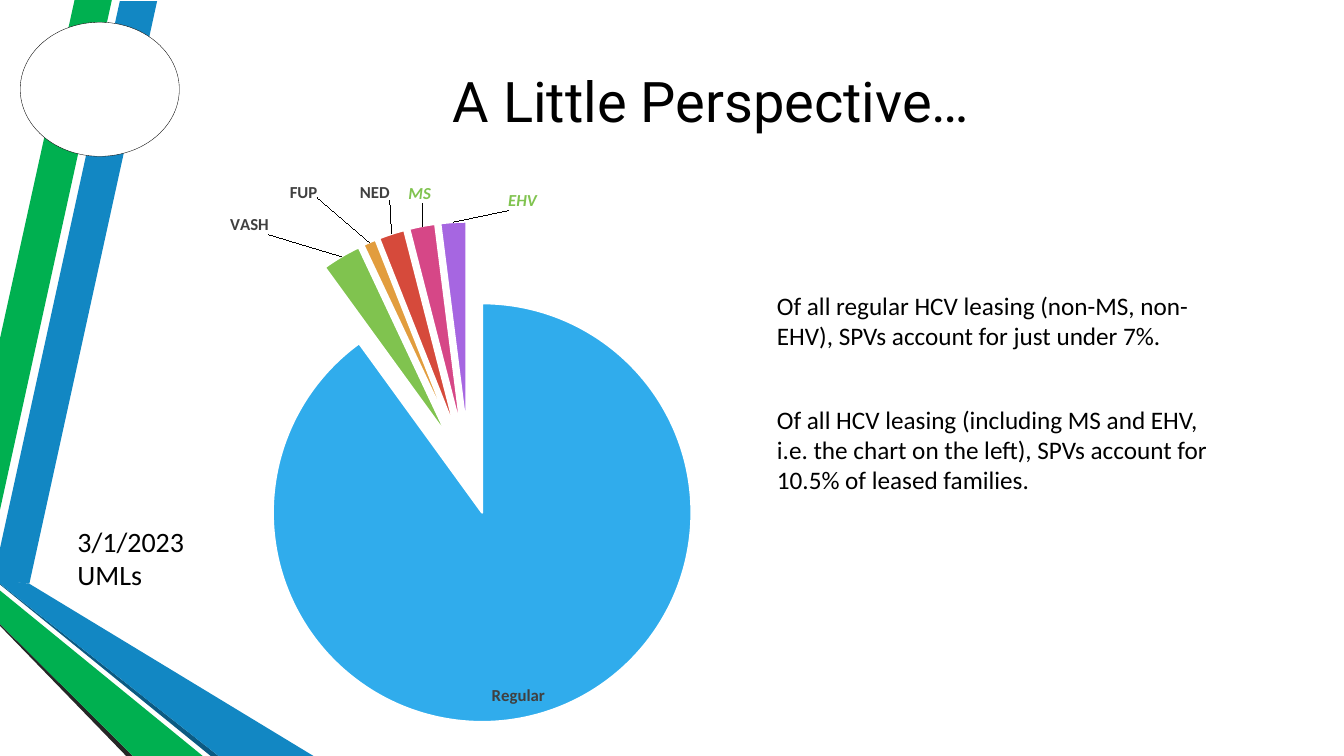
from lxml import etree
from pptx import Presentation
from pptx.chart.data import CategoryChartData
from pptx.dml.color import RGBColor
from pptx.enum.chart import XL_CHART_TYPE, XL_LABEL_POSITION
from pptx.enum.shapes import MSO_SHAPE
from pptx.enum.text import MSO_ANCHOR, MSO_AUTO_SIZE, PP_ALIGN
from pptx.oxml import parse_xml
from pptx.oxml.ns import nsdecls, qn
from pptx.util import Cm, Pt

PIE = XL_CHART_TYPE.PIE
INSIDE_END = XL_LABEL_POSITION.INSIDE_END
OUTSIDE_END = XL_LABEL_POSITION.OUTSIDE_END
ELLIPSE = MSO_SHAPE.OVAL
MIDDLE = MSO_ANCHOR.MIDDLE
GROW = MSO_AUTO_SIZE.SHAPE_TO_FIT_TEXT
CENTER = PP_ALIGN.CENTER

BLACK = RGBColor(0x00, 0x00, 0x00)
WHITE = RGBColor(0xFF, 0xFF, 0xFF)
BLUE = RGBColor(0x12, 0x87, 0xC3)
NAVY = RGBColor(0x0C, 0x5A, 0x82)
GREEN = RGBColor(0x00, 0xB0, 0x50)
CHARCOAL = RGBColor(0x26, 0x26, 0x26)
GRAY = RGBColor(0x40, 0x40, 0x40)
SKY = RGBColor(0x30, 0xAC, 0xEC)
LIME = RGBColor(0x80, 0xC3, 0x4F)
ORANGE = RGBColor(0xE2, 0x9D, 0x3E)
RED = RGBColor(0xD6, 0x4A, 0x3B)
PINK = RGBColor(0xD6, 0x47, 0x87)
PURPLE = RGBColor(0xA6, 0x66, 0xE1)

RIBBONS = [
    (BLUE, [(0, 13.82), (0, 14.63), (0.74, 14.71), (3.96, 0.03), (3.02, 0.03)]),
    (GREEN, [(2.82, 0), (1.88, 0), (0, 8.53), (0, 12.85)]),
    (CHARCOAL, [(0, 15.72), (0, 15.77), (3.18, 19.05), (3.35, 19.05)]),
    (NAVY, [(0, 14.71), (0, 14.73), (5.31, 19.05), (5.51, 19.05)]),
    (BLUE, [(0, 14.71), (5.51, 19.05), (7.9, 19.05), (0.74, 14.71), (0, 14.61)]),
    (GREEN, [(0, 15.72), (3.35, 19.05), (5.11, 19.05), (0, 14.88)]),
]

SLICES = [
    ("Regular", 90, SKY, GRAY, None),
    ("VASH", 3, LIME, GRAY, (-0.07, -0.03)),
    ("FUP", 1, ORANGE, GRAY, (-0.05, -0.07)),
    ("NED", 2, RED, GRAY, (0, -0.05)),
    ("MS", 2, PINK, LIME, (0.01, -0.03)),
    ("EHV", 2, PURPLE, LIME, (0.07, -0.01)),
]

NOTES = [
    ("3/1/2023 UMLs", (1.7, 13.08, 4.78, 1.12), 20),
    ("Of all regular HCV leasing (non-MS, non-EHV), SPVs account for just under 7%.",
     (19.33, 7.19, 11.68, 1.8), 18),
    ("Of all HCV leasing (including MS and EHV, i.e. the chart on the left), "
     "SPVs account for 10.5% of leased families.", (19.33, 10.06, 11.68, 2.57), 18),
]


def lengths(values):
    return [Cm(value) for value in values]


def write_text(frame, text, size, font="Calibri", color=BLACK, align=None):
    frame.word_wrap = True
    para = frame.paragraphs[0]
    para.alignment = align
    span = para.add_run()
    span.text = text
    span.font.name = font
    span.font.size = Pt(size)
    span.font.color.rgb = color


def add_ribbon(page, color, corners):
    points = [lengths(corner) for corner in corners]
    builder = page.shapes.build_freeform(*points[0], scale=1.0)
    builder.add_line_segments(points[1:], close=True)
    ribbon = builder.convert_to_shape()
    ribbon.shadow.inherit = False
    ribbon.fill.solid()
    ribbon.fill.fore_color.rgb = color
    ribbon.line.fill.background()


def add_badge(page):
    badge = page.shapes.add_shape(ELLIPSE, *lengths((0.51, 0.56, 4.01, 3.38)))
    badge.shadow.inherit = False
    badge.fill.solid()
    badge.fill.fore_color.rgb = WHITE
    badge.line.color.rgb = BLACK
    badge.line.width = Pt(0.25)


def place_title(page, text):
    title = page.shapes.title
    title.left, title.top, title.width, title.height = lengths((3.66, 0.38, 28.52, 4.27))
    title.text_frame.vertical_anchor = MIDDLE
    write_text(title.text_frame, text, 40, font="Roboto", align=CENTER)
    title.element.getparent().append(title.element)


def add_note(page, text, place, size):
    box = page.shapes.add_textbox(*lengths(place))
    write_text(box.text_frame, text, size)
    box.text_frame.auto_size = GROW


def manual_layout(inner=False, **fractions):
    target = '<c:layoutTarget val="inner"/>' if inner else ""
    modes = '<c:xMode val="edge"/><c:yMode val="edge"/>' if inner else ""
    values = "".join(f'<c:{name} val="{value}"/>' for name, value in fractions.items())
    return parse_xml(f'<c:layout {nsdecls("c")}><c:manualLayout>{target}{modes}{values}'
                     "</c:manualLayout></c:layout>")


def format_label(label, color, shift):
    label.font.name = "Calibri"
    label.font.size = Pt(12)
    label.font.bold = True
    label.font.italic = color == LIME
    label.font.color.rgb = color
    label.position = OUTSIDE_END if shift else INSIDE_END


def add_leasing_pie(page):
    data = CategoryChartData(number_format="#,##0")
    data.categories = [name for name, *_ in SLICES]
    data.add_series("Series 1", [value for _, value, *_ in SLICES])
    chart = page.shapes.add_chart(PIE, *lengths((-0.81, 4.6, 25.02, 14.07)), data).chart
    chart.has_title = False
    chart.has_legend = False
    chart.font.name = "Calibri"
    chart.font.size = Pt(10)
    chart.font.color.rgb = BLACK
    plot = chart.plots[0]
    plot.vary_by_categories = True
    series = plot.series[0]
    series.data_labels.show_category_name = True
    series.data_labels.show_value = False

    for index, (_, _, fill, color, shift) in enumerate(SLICES):
        point = series.points[index]
        point.format.fill.solid()
        point.format.fill.fore_color.rgb = fill
        point.format.line.color.rgb = WHITE
        point.format.line.width = Pt(1.5)
        format_label(point.data_label, color, shift)

    root = series._element
    explosion = etree.Element(qn("c:explosion"), val="20")
    root.find(qn("c:dPt")).addprevious(explosion)
    for label, (*_, shift) in zip(root.iter(qn("c:dLbl")), SLICES):
        label.find(qn("c:showVal")).set("val", "0")
        label.find(qn("c:showCatName")).set("val", "1")
        if shift:
            label.find(qn("c:idx")).addnext(manual_layout(x=shift[0], y=shift[1]))
    root.find(qn("c:dLbls")).find(qn("c:showLeaderLines")).set("val", "1")

    area = chart._chartSpace.find(".//" + qn("c:plotArea"))
    for old in area.findall(qn("c:layout")):
        area.remove(old)
    area.insert(0, manual_layout(inner=True, x=0.25, y=0.07, w=0.51, h=0.9))


def main():
    deck = Presentation()
    deck.slide_width, deck.slide_height = lengths((33.87, 19.05))
    page = deck.slides.add_slide(deck.slide_layouts[5])
    for color, corners in RIBBONS:
        add_ribbon(page, color, corners)
    add_badge(page)
    place_title(page, "A Little Perspective…")
    add_leasing_pie(page)
    for text, place, size in NOTES:
        add_note(page, text, place, size)
    deck.save("out.pptx")


if __name__ == "__main__":
    main()
